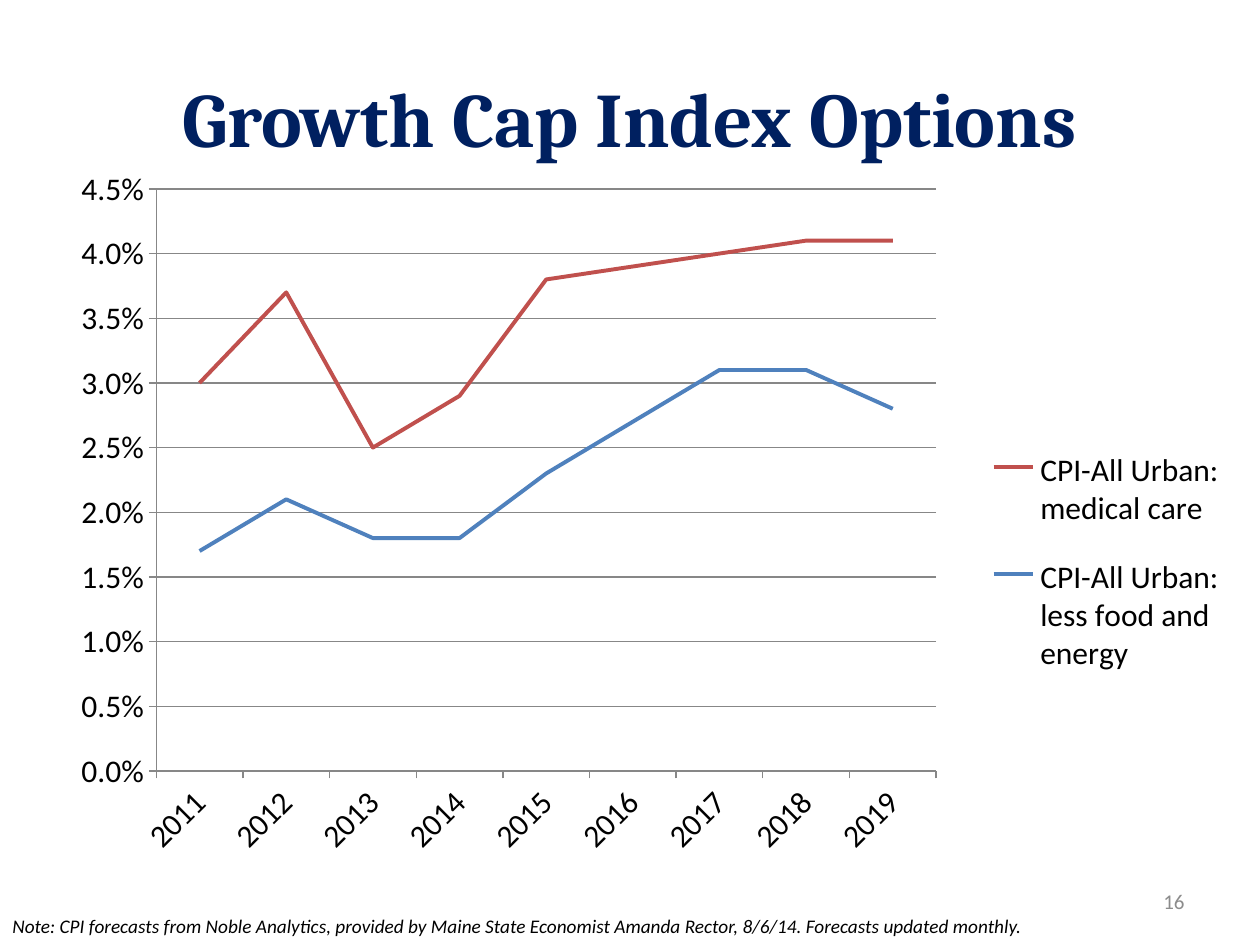
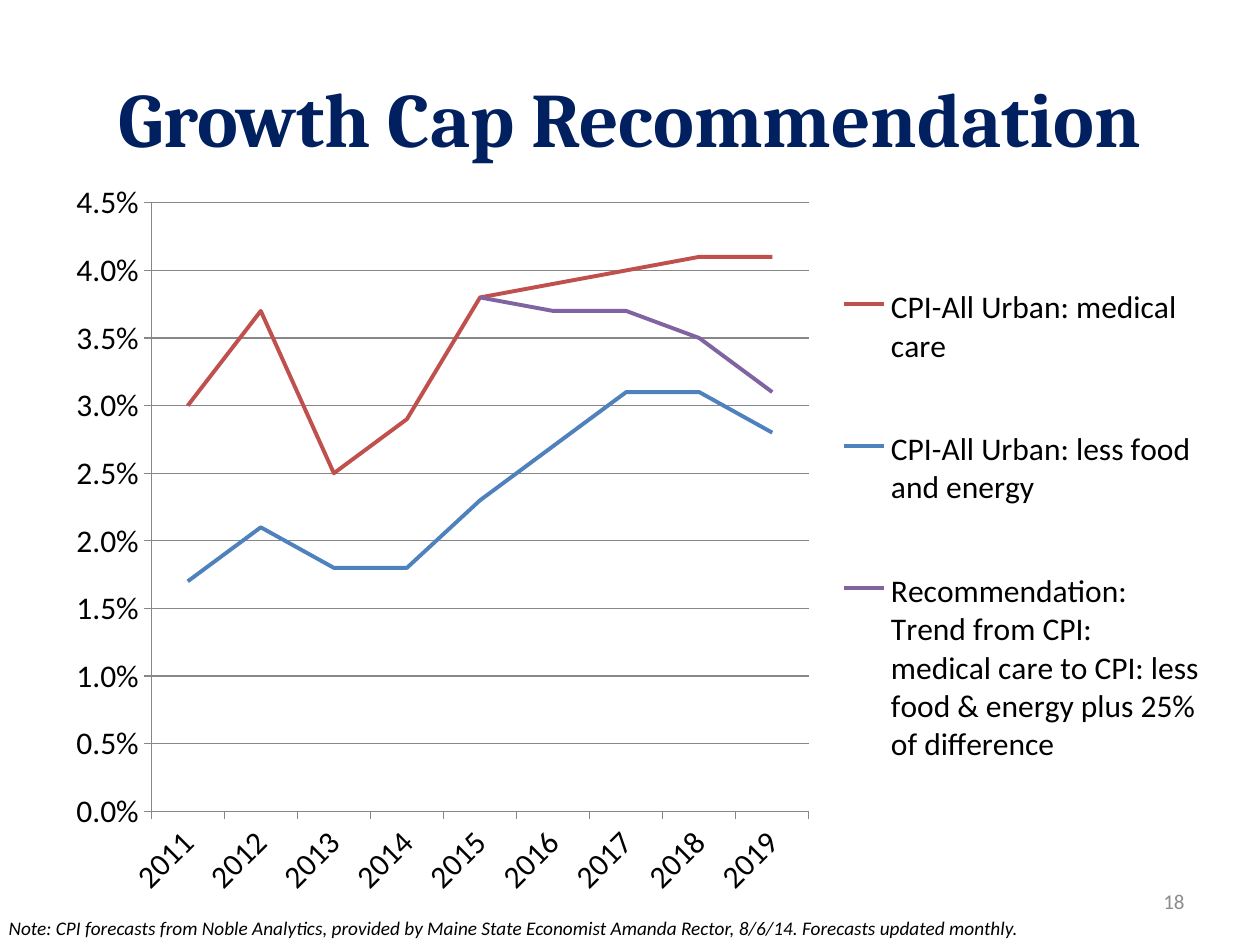
from lxml.etree import SubElement
from pptx import Presentation
from pptx.chart.data import CategoryChartData
from pptx.dml.color import RGBColor
from pptx.enum.chart import XL_CHART_TYPE, XL_LEGEND_POSITION, XL_TICK_MARK
from pptx.enum.text import MSO_ANCHOR, MSO_AUTO_SIZE, PP_ALIGN
from pptx.oxml.ns import qn
from pptx.util import Inches, Pt

# Shared colours and fonts
NAVY = RGBColor(0x00, 0x20, 0x60)
BLACK = RGBColor(0x00, 0x00, 0x00)
GREY = RGBColor(0x8C, 0x8C, 0x8C)
AXIS_GREY = RGBColor(0x87, 0x87, 0x87)
RED = RGBColor(0xC0, 0x50, 0x4D)
BLUE = RGBColor(0x4F, 0x81, 0xBD)
PURPLE = RGBColor(0x80, 0x64, 0xA2)
TITLE_FONT = "Cambria"
BODY_FONT = "Calibri"

# Shared content
NOTE = ("Note: CPI forecasts from Noble Analytics, provided by Maine State Economist "
        "Amanda Rector, 8/6/14. Forecasts updated monthly.")
YEARS = [str(year) for year in range(2011, 2020)]
MEDICAL_CARE = ("CPI-All Urban: medical care", RED,
                [0.03, 0.037, 0.025, 0.029, 0.038, 0.039, 0.04, 0.041, 0.041])
LESS_FOOD_ENERGY = ("CPI-All Urban: less food and energy", BLUE,
                    [0.017, 0.021, 0.018, 0.018, 0.023, 0.027, 0.031, 0.031, 0.028])
RECOMMENDATION = ("Recommendation: Trend from CPI:\nmedical care to CPI: "
                  "less food & energy plus 25% of difference", PURPLE,
                  [None] * 4 + [0.038, 0.037, 0.037, 0.035, 0.031])


def style_font(font, name, size, color):
    font.name = name
    font.size = Pt(size)
    font.color.rgb = color


def add_text(page, text, place, font_name, size, color, align=PP_ALIGN.LEFT,
             anchor=MSO_ANCHOR.TOP):
    box = page.shapes.add_textbox(*map(Inches, place))
    frame = box.text_frame
    frame.word_wrap = True
    frame.vertical_anchor = anchor
    frame.text = text
    para = frame.paragraphs[0]
    para.alignment = align
    style_font(para.runs[0].font, font_name, size, color)
    return box


def add_title(page, text):
    box = add_text(page, text, (0.5, 0.3, 9, 1.25), TITLE_FONT, 44, NAVY,
                   PP_ALIGN.CENTER, MSO_ANCHOR.MIDDLE)
    box.text_frame.paragraphs[0].runs[0].font.bold = True


def add_note(page, place, wrap):
    frame = add_text(page, NOTE, place, BODY_FONT, 11, BLACK).text_frame
    frame.word_wrap = wrap
    frame.auto_size = MSO_AUTO_SIZE.SHAPE_TO_FIT_TEXT
    frame.paragraphs[0].runs[0].font.italic = True


def add_page_number(page, number):
    add_text(page, str(number), (7.17, 6.95, 2.33, 0.4), BODY_FONT, 12, GREY,
             PP_ALIGN.RIGHT, MSO_ANCHOR.MIDDLE)


def set_layout(element, position, chart_place, area, inner=False):
    """Place a chart part at an area given in inches on the slide."""
    left, top, width, height = chart_place
    fractions = ((area[0] - left) / width, (area[1] - top) / height,
                 area[2] / width, area[3] / height)
    for old in element.findall(qn("c:layout")):
        element.remove(old)
    layout = SubElement(element, qn("c:layout"))
    element.insert(position, layout)
    manual = SubElement(layout, qn("c:manualLayout"))
    if inner:
        SubElement(manual, qn("c:layoutTarget")).set("val", "inner")
    for mode in ("xMode", "yMode"):
        SubElement(manual, qn(f"c:{mode}")).set("val", "edge")
    for name, fraction in zip("xywh", fractions):
        SubElement(manual, qn(f"c:{name}")).set("val", f"{fraction:.4f}")


def style_axis(axis):
    axis.major_tick_mark = XL_TICK_MARK.OUTSIDE
    axis.minor_tick_mark = XL_TICK_MARK.NONE
    axis.format.line.color.rgb = AXIS_GREY
    axis.format.line.width = Pt(0.75)
    style_font(axis.tick_labels.font, BODY_FONT, 18, BLACK)


def add_line_chart(page, place, series_list, plot_area, legend_area):
    data = CategoryChartData(number_format="0.0%")
    data.categories = YEARS
    for name, _, values in series_list:
        data.add_series(name, values)
    chart = page.shapes.add_chart(XL_CHART_TYPE.LINE, *map(Inches, place), data).chart
    chart.has_title = False
    style_font(chart.font, BODY_FONT, 18, BLACK)

    # Lines
    for series, (_, color, _) in zip(chart.plots[0].series, series_list):
        series.smooth = False
        series.format.line.color.rgb = color
        series.format.line.width = Pt(2.25)

    # Axes
    years, rates = chart.category_axis, chart.value_axis
    style_axis(years)
    style_axis(rates)
    years.tick_labels.font._element.getparent().getparent().getparent().find(
        qn("a:bodyPr")).set("rot", "-2700000")
    rates.minimum_scale, rates.maximum_scale, rates.major_unit = 0, 0.045, 0.005
    rates.tick_labels.number_format = "0.0%"
    rates.tick_labels.number_format_is_linked = False
    rates.has_major_gridlines = True
    rates.major_gridlines.format.line.color.rgb = AXIS_GREY
    rates.major_gridlines.format.line.width = Pt(0.75)

    # Legend and placement
    chart.has_legend = True
    legend = chart.legend
    legend.position = XL_LEGEND_POSITION.RIGHT
    legend.include_in_layout = False
    style_font(legend.font, BODY_FONT, 18, BLACK)
    set_layout(legend._element, 1, place, legend_area)
    plot = chart._chartSpace.find(".//" + qn("c:plotArea"))
    set_layout(plot, 0, place, plot_area, inner=True)


def main():
    deck = Presentation()
    deck.slide_width, deck.slide_height = Inches(10), Inches(7.5)
    blank = deck.slide_layouts[6]

    # Growth cap options
    page = deck.slides.add_slide(blank)
    add_line_chart(page, (0.33, 1.33, 9.5, 5.68), [MEDICAL_CARE, LESS_FOOD_ENERGY],
                   (1.24, 1.5, 6.19, 4.62), (7.78, 3.34, 2, 2.24))
    add_title(page, "Growth Cap Index Options")
    add_note(page, (0, 7.21, 9.17, 0.29), wrap=False)
    add_page_number(page, 16)

    # Growth cap recommendation
    page = deck.slides.add_slide(blank)
    add_line_chart(page, (0.42, 1.33, 9.25, 5.89),
                   [MEDICAL_CARE, LESS_FOOD_ENERGY, RECOMMENDATION],
                   (1.2, 1.61, 5.22, 4.83), (6.7, 1.77, 2.86, 4.81))
    add_title(page, "Growth Cap Recommendation")
    add_note(page, (-0.03, 7.22, 9.58, 0.29), wrap=True)
    add_page_number(page, 18)

    deck.save("out.pptx")


if __name__ == "__main__":
    main()
